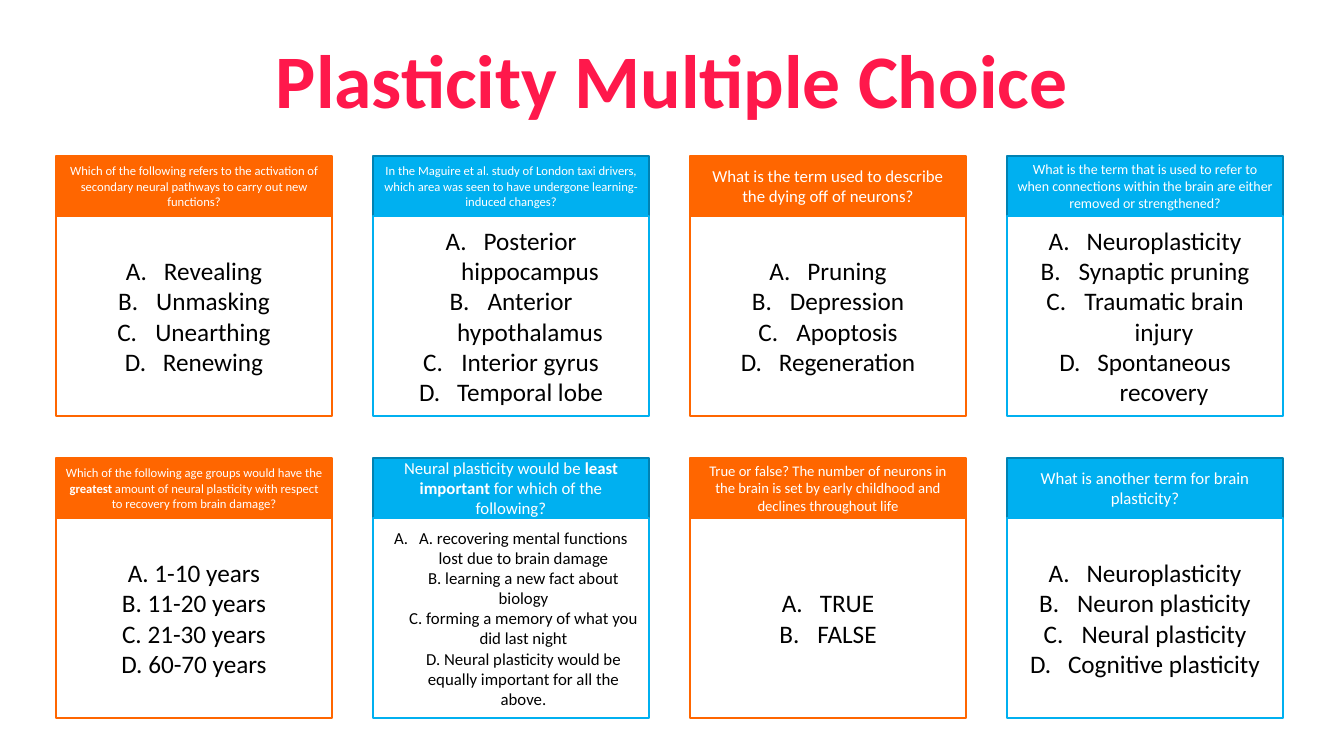
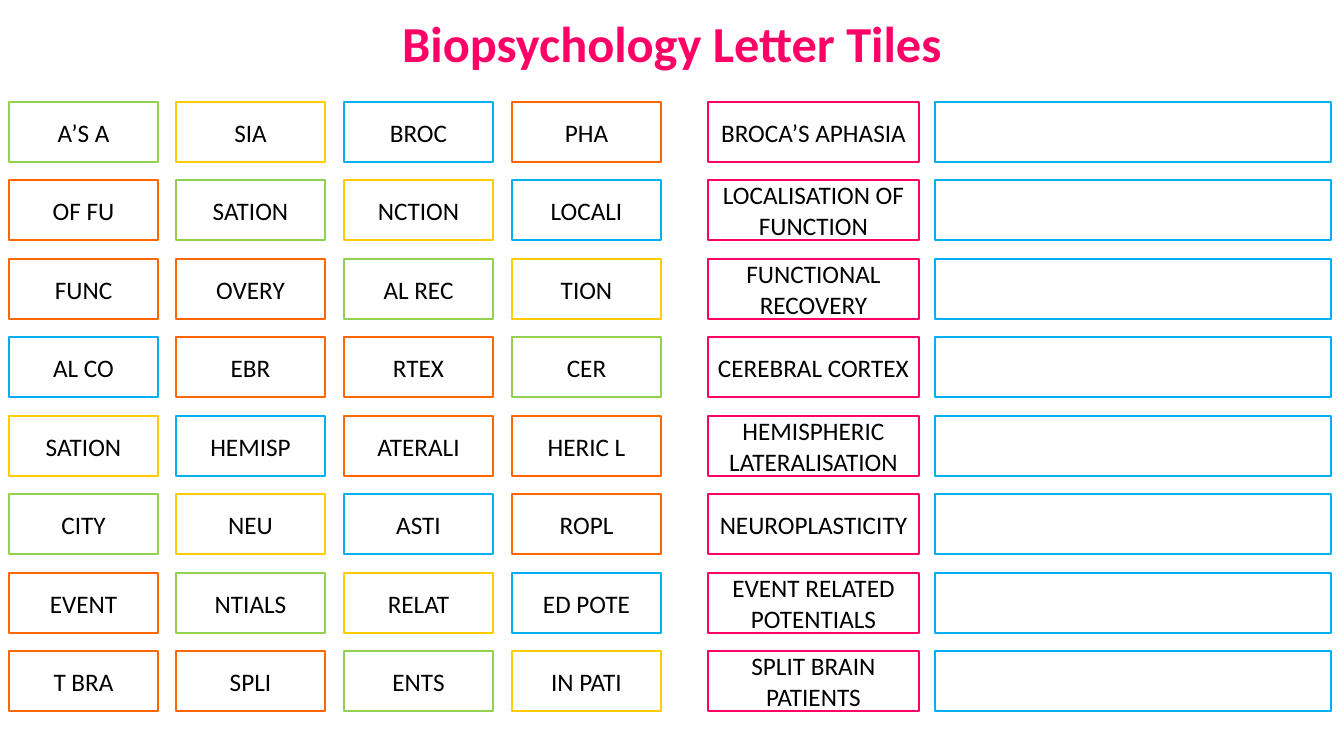
from dataclasses import dataclass

from pptx import Presentation
from pptx.dml.color import RGBColor
from pptx.enum.shapes import MSO_SHAPE
from pptx.enum.text import MSO_ANCHOR, MSO_AUTO_SIZE, PP_ALIGN
from pptx.oxml.xmlchemy import OxmlElement
from pptx.util import Emu, Pt

SLIDE_W, SLIDE_H = 1344, 756
SCALE = 12192000 / SLIDE_W


@dataclass(frozen=True)
class Theme:
    font: str = "Calibri"
    white: str = "FFFFFF"
    black: str = "000000"
    orange: str = "FF6600"
    blue: str = "00B0F0"
    dark_blue: str = "0082B2"
    green: str = "92D050"
    yellow: str = "FFCC00"
    pink: str = "FF0066"
    red: str = "FF184B"
    quiz_title: float = 54
    tiles_title: float = 36
    body: float = 18
    small: float = 12
    line: float = 1


T = Theme()

QUESTIONS = [
    ("Which of the following refers to the activation of secondary neural pathways to carry out new functions?", 9,
     ["Revealing", "Unmasking", "Unearthing", "Renewing"], {"indent": 38}),
    ("In the Maguire et al. study of London taxi drivers, which area was seen to have undergone "
     "learning-induced changes?", 9,
     ["Posterior hippocampus", "Anterior hypothalamus", "Interior gyrus", "Temporal lobe"], {"indent": 38}),
    ("What is the term used to describe the dying off of neurons?", 12,
     ["Pruning", "Depression", "Apoptosis", "Regeneration"], {"indent": 38}),
    ("What is the term that is used to refer to when connections within the brain are either removed "
     "or strengthened?", 10,
     ["Neuroplasticity", "Synaptic pruning", "Traumatic brain injury", "Spontaneous recovery"], {"indent": 38}),
    ("Which of the following age groups would have the **greatest** amount of neural plasticity with "
     "respect to recovery from brain damage?", 9,
     ["A. 1-10 years\nB. 11-20 years\nC. 21-30 years\nD. 60-70 years"], {}),
    ("Neural plasticity would be **least important** for which of the following?", 12,
     ["A. recovering mental functions lost due to brain damage\n"
      "B. learning a new fact about biology\n"
      "C. forming a memory of what you did last night\n"
      "D. Neural plasticity would be equally important for all the above."],
     {"indent": 25, "size": T.small}),
    ("True or false? The number of neurons in the brain is set by early childhood and declines "
     "throughout life", 10.5, ["TRUE", "FALSE"], {"indent": 38}),
    ("What is another term for brain plasticity?", 12,
     ["Neuroplasticity", "Neuron plasticity", "Neural plasticity", "Cognitive plasticity"], {"indent": 38}),
]

G, Y, B, O = T.green, T.yellow, T.blue, T.orange
TILE_ROWS = [
    (["A’S A", "SIA", "BROC", "PHA"], [G, Y, B, O], "BROCA’S APHASIA"),
    (["OF FU", "SATION", "NCTION", "LOCALI"], [O, G, Y, B], "LOCALISATION OF FUNCTION"),
    (["FUNC", "OVERY", "AL REC", "TION"], [O, O, G, Y], "FUNCTIONAL RECOVERY"),
    (["AL CO", "EBR", "RTEX", "CER"], [B, O, O, G], "CEREBRAL CORTEX"),
    (["SATION", "HEMISP", "ATERALI", "HERIC L"], [Y, B, O, O], "HEMISPHERIC LATERALISATION"),
    (["CITY", "NEU", "ASTI", "ROPL"], [G, Y, B, O], "NEUROPLASTICITY"),
    (["EVENT", "NTIALS", "RELAT", "ED POTE"], [O, G, Y, B], "EVENT RELATED POTENTIALS"),
    (["T BRA", "SPLI", "ENTS", "IN PATI"], [O, O, G, Y], "SPLIT BRAIN PATIENTS"),
]


def px(n):
    return Emu(round(n * SCALE))


def rgb(color):
    return RGBColor.from_string(color)


def number_paragraph(p, indent):
    pPr = p._p.get_or_add_pPr()
    pPr.set("marL", str(px(indent)))
    pPr.set("indent", str(-px(indent)))
    bullet = OxmlElement("a:buAutoNum")
    bullet.set("type", "alphaUcPeriod")
    pPr.append(bullet)


def write(tf, paragraphs, size=T.body, color=T.black, bold=False, indent=0):
    tf.word_wrap = True
    for i, text in enumerate(paragraphs):
        p = tf.add_paragraph() if i else tf.paragraphs[0]
        p.alignment = PP_ALIGN.CENTER
        if indent:
            number_paragraph(p, indent)
        for j, line in enumerate(text.split("\n")):
            if j:
                p.add_line_break()
            for k, part in enumerate(line.split("**")):
                r = p.add_run()
                r.text = part
                r.font.name = T.font
                r.font.size = Pt(size)
                r.font.bold = bold or k % 2 == 1
                r.font.color.rgb = rgb(color)


def add_box(slide, x, y, w, h, paragraphs=(), fill=T.white, line=T.blue, **fmt):
    sp = slide.shapes.add_shape(MSO_SHAPE.RECTANGLE, px(x), px(y), px(w), px(h))
    sp.shadow.inherit = False
    sp.fill.solid()
    sp.fill.fore_color.rgb = rgb(fill)
    sp.line.color.rgb = rgb(line)
    sp.line.width = Pt(T.line)
    sp.text_frame.vertical_anchor = MSO_ANCHOR.MIDDLE
    write(sp.text_frame, paragraphs, **fmt)


def add_title(slide, text, y, h, size, color):
    sp = slide.shapes.add_textbox(0, px(y), px(SLIDE_W), px(h))
    write(sp.text_frame, [text], size=size, color=color, bold=True)
    sp.text_frame.auto_size = MSO_AUTO_SIZE.SHAPE_TO_FIT_TEXT


def add_card(slide, x, y, w, h, question, size, answers, fmt, fill, edge):
    header = 60
    add_box(slide, x, y, w, header, [question], fill=fill, line=edge, size=size, color=T.white)
    add_box(slide, x, y + header, w, h - header, answers, line=fill, **fmt)


def add_tile_row(slide, x, y, h, letters, colors, term):
    for col, (text, color) in enumerate(zip(letters, colors)):
        add_box(slide, x + col * 503 // 3, y, 149, h, [text], line=color)
    add_box(slide, x + 699, y, 211, h, [term], line=T.pink)
    add_box(slide, x + 926, y, 396, h)


def quiz_slide(slide):
    schemes = [(T.orange, T.orange), (T.blue, T.dark_blue)]
    for i, item in enumerate(QUESTIONS):
        row, col = divmod(i, 4)
        add_card(slide, 56 + 317 * col, 156 + 302 * row, 276, 260, *item, *schemes[col % 2])
    add_title(slide, "Plasticity Multiple Choice", 28, 102, T.quiz_title, T.red)


def tiles_slide(slide):
    for row, item in enumerate(TILE_ROWS):
        add_tile_row(slide, 9, 102 + row * 157 // 2, 60, *item)
    add_title(slide, "Biopsychology Letter Tiles", 7, 72, T.tiles_title, T.pink)


def main():
    prs = Presentation()
    prs.slide_width, prs.slide_height = px(SLIDE_W), px(SLIDE_H)
    for build in (quiz_slide, tiles_slide):
        build(prs.slides.add_slide(prs.slide_layouts[6]))
    prs.save("out.pptx")


if __name__ == "__main__":
    main()
